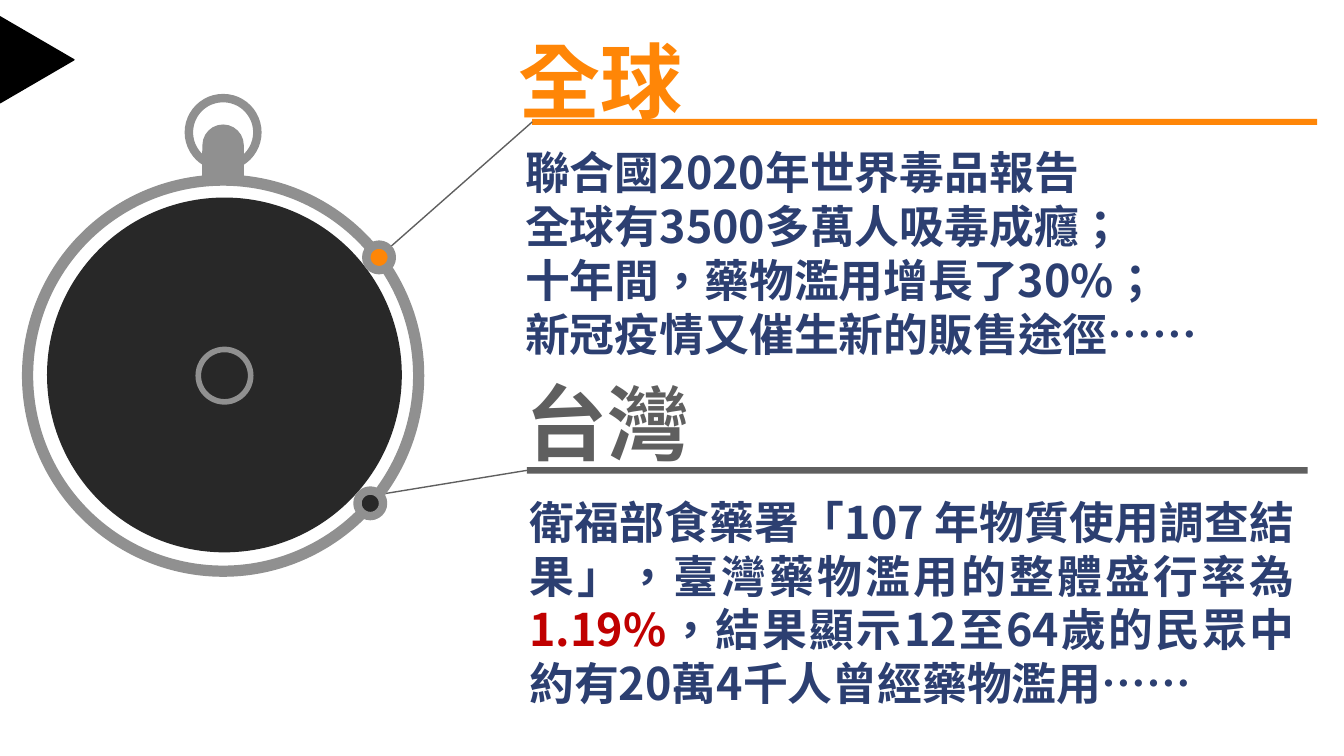
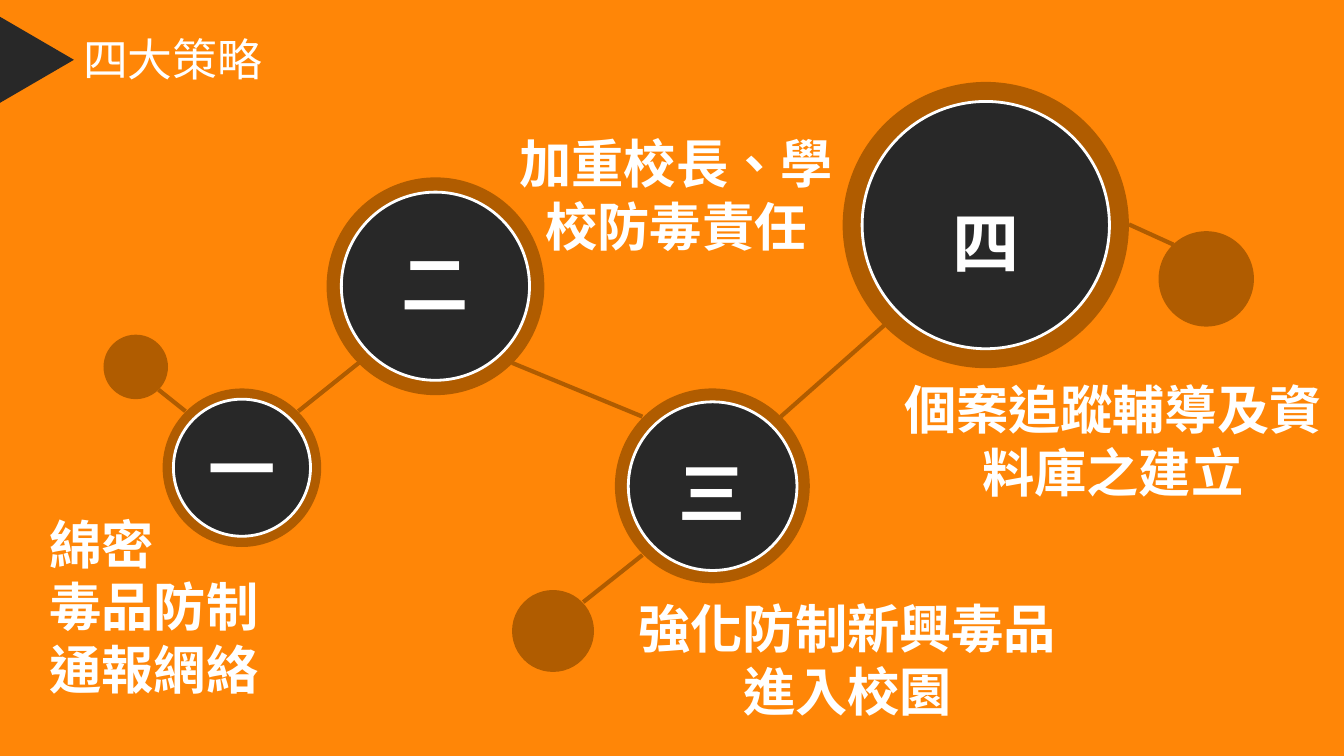
"""Build two slides on drug abuse figures and four strategies."""
from lxml.etree import SubElement
from pptx import Presentation
from pptx.dml.color import RGBColor
from pptx.enum.shapes import MSO_CONNECTOR, MSO_SHAPE
from pptx.enum.text import MSO_AUTO_SIZE, PP_ALIGN
from pptx.oxml.ns import qn
from pptx.util import Pt

SCALE = 4572
WIDE, HIGH = 2000, 1125
ORANGE, BROWN, DARK, WHITE = "FF8607", "B05C00", "282828", "FFFFFF"
GREY, SILVER, NAVY, RED, BLACK = "5F5F5F", "909090", "2C3F71", "C00000", "000000"
SANS, THIN = "Noto Sans CJK SC", "Roboto Condensed"
LEFT, MID, EVEN = PP_ALIGN.LEFT, PP_ALIGN.CENTER, PP_ALIGN.JUSTIFY
OVAL, RECT = MSO_SHAPE.OVAL, MSO_SHAPE.RECTANGLE
ROUND, TRI = MSO_SHAPE.ROUNDED_RECTANGLE, MSO_SHAPE.ISOSCELES_TRIANGLE

HEAD = {"size": Pt(44), "bold": True, "name": SANS}
BODY = {"size": Pt(24), "bold": True, "name": SANS}
LABEL = {"size": Pt(28), "bold": True, "name": SANS}
NUMBER = {"size": Pt(36), "bold": True, "name": SANS}
TITLE = {"size": Pt(24), "bold": False, "name": THIN}


def px(*sizes):
    return [size * SCALE for size in sizes]


def paint(color, code):
    color.rgb = RGBColor.from_string(code)


class Deck:
    """Hold the style and the current slide."""

    def __init__(self):
        self.prs = Presentation()
        self.prs.slide_width, self.prs.slide_height = px(WIDE, HIGH)

    def page(self):
        self.shapes = self.prs.slides.add_slide(self.prs.slide_layouts[6]).shapes

    def shape(self, kind, box, fill=None, line=None, width=1):
        item = self.shapes.add_shape(kind, *px(*box))
        item.shadow.inherit = False
        if fill:
            item.fill.solid()
            paint(item.fill.fore_color, fill)
        else:
            item.fill.background()
        if line:
            paint(item.line.color, line)
            item.line.width = Pt(width)
        else:
            item.line.fill.background()
        return item

    def disc(self, x, y, size, fill=None, line=None, width=1):
        half = size // 2
        return self.shape(OVAL, (x - half, y - half, size, size), fill, line, width)

    def line(self, start, end, color, width, goal=None):
        item = self.shapes.add_connector(MSO_CONNECTOR.STRAIGHT, *px(*start, *end))
        paint(item.line.color, color)
        item.line.width = Pt(width)
        SubElement(item._element.spPr, qn("a:effectLst"))
        if goal:
            item.end_connect(goal, 1)

    def text(self, box, rows, style, color, align=LEFT, wrap=True):
        frame = self.shapes.add_textbox(*px(*box)).text_frame
        frame.word_wrap = wrap
        frame.auto_size = MSO_AUTO_SIZE.SHAPE_TO_FIT_TEXT
        for i, row in enumerate(rows):
            para = frame.add_paragraph() if i else frame.paragraphs[0]
            para.alignment = align
            for part in [row] if isinstance(row, str) else row:
                words, tint = (part, color) if isinstance(part, str) else part
                run = para.add_run()
                run.text = words
                for key, value in style.items():
                    setattr(run.font, key, value)
                paint(run.font.color, tint)
                props = run._r.get_or_add_rPr()
                props.set("lang", "zh-TW")
                SubElement(props, qn("a:ea")).set("typeface", style["name"])

    def arrow(self, color, line=None):
        self.shape(TRI, (-9, 34, 128, 110), color, line, 0.75).rotation = 90

    def topic(self, bar, head, title, box, rows, color, start):
        goal = self.shape(RECT, bar, color)
        self.line(start, bar[:2], GREY, 0.75, goal)
        self.text(head, [title], HEAD, color, wrap=False)
        self.text(box, rows, BODY, NAVY, EVEN)

    def bubble(self, x, y, size, drop, word):
        self.disc(x, y, size, BROWN)
        self.disc(x, y, round(size * 0.865), DARK, WHITE, 1.5)
        self.text((x - 71, y - 71 + drop, 142, 142), [word], NUMBER, WHITE, MID, False)


def facts(deck):
    deck.page()
    deck.arrow(BLACK, BLACK)
    deck.topic((792, 177, 1168, 9), (752, 36, 288, 168), "全球", (762, 206, 1174, 344), [
        "聯合國2020年世界毒品報告",
        "全球有3500多萬人吸毒成癮；",
        "十年間，藥物濫用增長了30%；",
        "新冠疫情又催生新的販售途徑……",
    ], ORANGE, (578, 370))
    deck.topic((784, 695, 1162, 10), (762, 544, 288, 168), "台灣", (768, 726, 1178, 344), [[
        "衛福部食藥署「107 年物質使用調查結果」，臺灣藥物濫用的整體盛行率為",
        ("1.19%", RED),
        "，結果顯示12至64歲的民眾中約有20萬4千人曾經藥物濫用……",
    ]], GREY, (564, 736))
    deck.disc(334, 558, 528, DARK)
    deck.disc(332, 559, 582, None, SILVER, 6)
    deck.disc(334, 559, 78, DARK, SILVER, 3)
    deck.shape(ROUND, (304, 188, 56, 78), SILVER, SILVER, 2).adjustments[0] = 0.5
    deck.disc(332, 197, 102, None, SILVER, 4.5)
    deck.shape(RECT, (304, 226, 56, 44), SILVER, SILVER, 2)
    for x, y, fill in (564, 383, ORANGE), (551, 749, DARK):
        deck.disc(x, y, 38, fill, SILVER, 4.5)


def plans(deck):
    deck.page()
    deck.shape(RECT, (0, 0, WIDE, HIGH), ORANGE)
    deck.text((104, 38, 310, 100), ["四大策略"], TITLE, WHITE, wrap=False)
    deck.arrow(DARK)
    for spot in (
        (360, 696, 236, 1, "一"), (648, 426, 324, -5, "二"),
        (1060, 723, 290, 10, "三"), (1467, 335, 426, 26, "四"),
    ):
        deck.bubble(*spot)
    for x, y, size in (202, 546, 96), (823, 939, 122), (1795, 415, 142):
        deck.disc(x, y, size, BROWN)
    for start, end in (
        ((444, 612), (534, 540)), ((762, 540), (956, 620)),
        ((1162, 620), (1316, 484)), ((236, 580), (276, 612)),
        ((868, 896), (956, 826)), ((1680, 334), (1746, 364)),
    ):
        deck.line(start, end, BROWN, 2.25)
    for box, rows, align in (
        ((54, 752, 490, 302), ["綿密", "毒品防制", "通報網絡"], LEFT),
        ((748, 186, 516, 208), ["加重校長、學校防毒責任"], MID),
        ((908, 878, 706, 208), ["強化防制新興毒品", "進入校園"], MID),
        ((1312, 552, 688, 208), ["個案追蹤輔導及資料庫之建立"], MID),
    ):
        deck.text(box, rows, LABEL, WHITE, align)


def main():
    deck = Deck()
    facts(deck)
    plans(deck)
    deck.prs.save("out.pptx")


if __name__ == "__main__":
    main()
